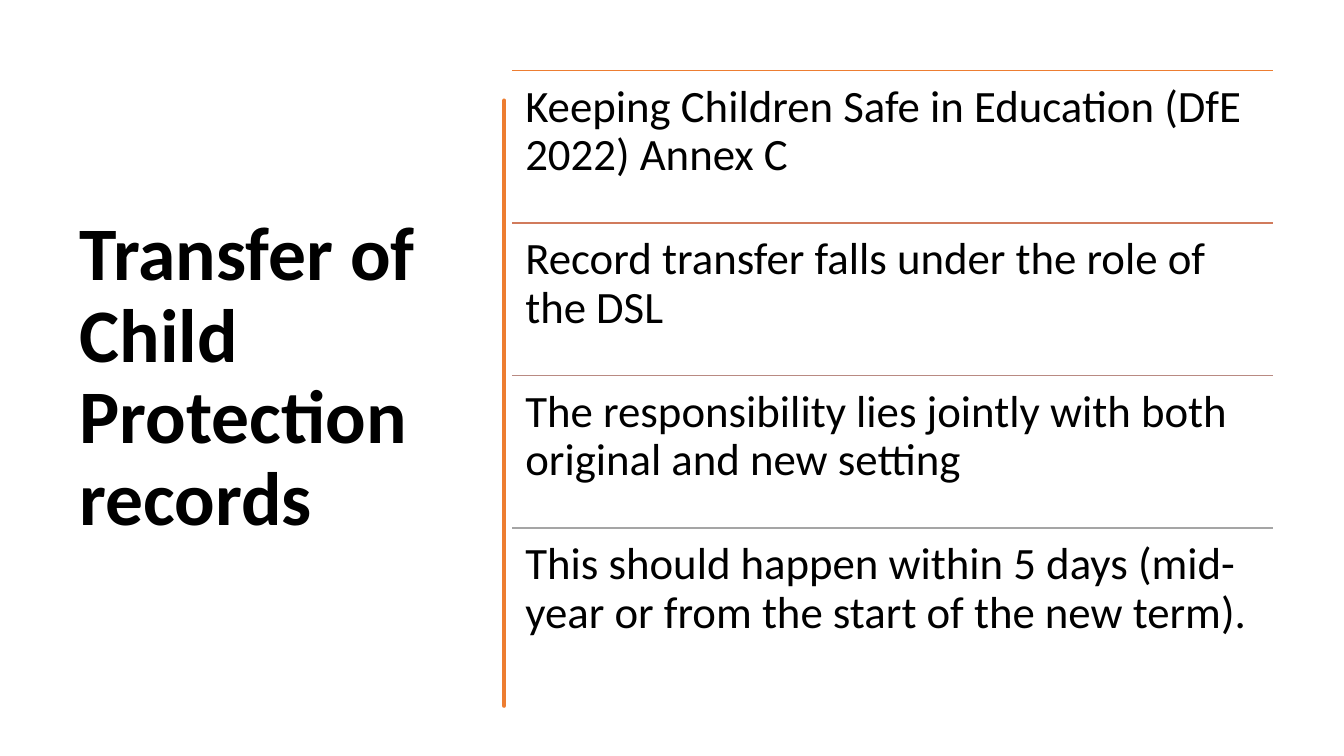
from dataclasses import dataclass

from lxml import etree
from pptx import Presentation
from pptx.dml.color import RGBColor
from pptx.enum.shapes import MSO_CONNECTOR
from pptx.enum.text import MSO_ANCHOR
from pptx.oxml.ns import qn
from pptx.util import Inches, Pt

STRAIGHT = MSO_CONNECTOR.STRAIGHT
TOP = MSO_ANCHOR.TOP
MIDDLE = MSO_ANCHOR.MIDDLE


@dataclass(frozen=True)
class Theme:
    font: str = "Calibri"
    ink: str = "000000"
    accent: str = "ED7D31"
    title_size: int = 54
    body_size: int = 32
    rule_width: float = 1
    divider_width: float = 3.25
    line_spacing: float = 0.9


@dataclass(frozen=True)
class Box:
    left: float
    top: float
    width: float
    height: float

    def row(self, index, count):
        height = self.height / count
        return Box(self.left, self.top + index * height, self.width, height)

    def lengths(self):
        return [Inches(v) for v in (self.left, self.top, self.width, self.height)]


THEME = Theme()
PAGE_WIDTH, PAGE_HEIGHT = 13.33, 7.5
TITLE_BOX = Box(0.69, 0.7, 3.74, 6.11)
DIVIDER_BOX = Box(4.73, 0.84, 0.02, 5.92)
POINTS_BOX = Box(5.08, 0.7, 7.55, 6.05)

TITLE = "Transfer of Child Protection records"
POINTS = [
    ("Keeping Children Safe in Education (DfE 2022) Annex C", "ED7D31"),
    ("Record transfer falls under the role of the DSL", "D17B5C"),
    ("The responsibility lies jointly with both original and new setting", "B98A82"),
    ("This should happen within 5 days (mid-year or from the start of the new term).", "A5A5A5"),
]
RIGHT_EDGE = [
    (0, 0), (0.01, 0.26), (0, 0.62), (-0.01, 1.01), (0, 1.42), (-0.01, 1.76),
    (0, 2.1), (0.01, 2.46), (0, 2.72), (0.01, 3.06), (0, 3.52), (-0.02, 3.88),
    (0, 4.26), (0.02, 4.66), (0, 5), (-0.01, 5.4), (0, 5.92),
]
LEFT_EDGE = [
    (0, 5.92), (-0.01, 5.6), (0, 5.29), (0.01, 5), (0, 4.73), (-0.01, 4.3),
    (0, 3.93), (-0.01, 3.65), (0, 3.31), (0.01, 2.9), (0, 2.51), (-0.01, 2.1),
    (0, 1.66), (0.01, 1.3), (0, 0.97), (0.01, 0.5), (0, 0),
]


def apply_format(target, values):
    for name, value in values.items():
        setattr(target, name, value)


def style_line(line, color, width):
    line.color.rgb = RGBColor.from_string(color)
    line.width = Pt(width)


def add_text(page, box, text, size, bold, anchor, inset_x, inset_y):
    frame = page.shapes.add_textbox(*box.lengths()).text_frame
    apply_format(frame, {
        "word_wrap": True,
        "vertical_anchor": anchor,
        "margin_left": Inches(inset_x),
        "margin_right": Inches(inset_x),
        "margin_top": Inches(inset_y),
        "margin_bottom": Inches(inset_y),
    })
    para = frame.paragraphs[0]
    para.line_spacing = THEME.line_spacing
    span = para.add_run()
    span.text = text
    apply_format(span.font, {"name": THEME.font, "size": Pt(size), "bold": bold})
    span.font.color.rgb = RGBColor.from_string(THEME.ink)


def add_title(page, box):
    add_text(page, box, TITLE, THEME.title_size, True, MIDDLE, 0.1, 0.05)


def add_divider(page, box):
    right = [(box.left + box.width + x, box.top + y) for x, y in RIGHT_EDGE]
    left = [(box.left + x, box.top + y) for x, y in LEFT_EDGE]
    start, *others = right + left
    builder = page.shapes.build_freeform(*start, scale=Inches(1))
    builder.add_line_segments(others, close=True)
    divider = builder.convert_to_shape()
    divider.shadow.inherit = False
    divider.fill.solid()
    divider.fill.fore_color.rgb = RGBColor.from_string(THEME.accent)
    style_line(divider.line, THEME.accent, THEME.divider_width)
    etree.SubElement(divider.line._get_or_add_ln(), qn("a:round"))


def add_points(page, box):
    for index, (text, color) in enumerate(POINTS):
        row = box.row(index, len(POINTS))
        left, top, width, _ = row.lengths()
        rule = page.shapes.add_connector(STRAIGHT, left, top, left + width, top)
        style_line(rule.line, color, THEME.rule_width)
        etree.SubElement(rule._element.spPr, qn("a:effectLst"))
        add_text(page, row, text, THEME.body_size, False, TOP, 0.13, 0.13)


def main():
    deck = Presentation()
    apply_format(deck, {
        "slide_width": Inches(PAGE_WIDTH),
        "slide_height": Inches(PAGE_HEIGHT),
    })
    page = deck.slides.add_slide(deck.slide_layouts[6])
    add_title(page, TITLE_BOX)
    add_divider(page, DIVIDER_BOX)
    add_points(page, POINTS_BOX)
    deck.save("out.pptx")


if __name__ == "__main__":
    main()
